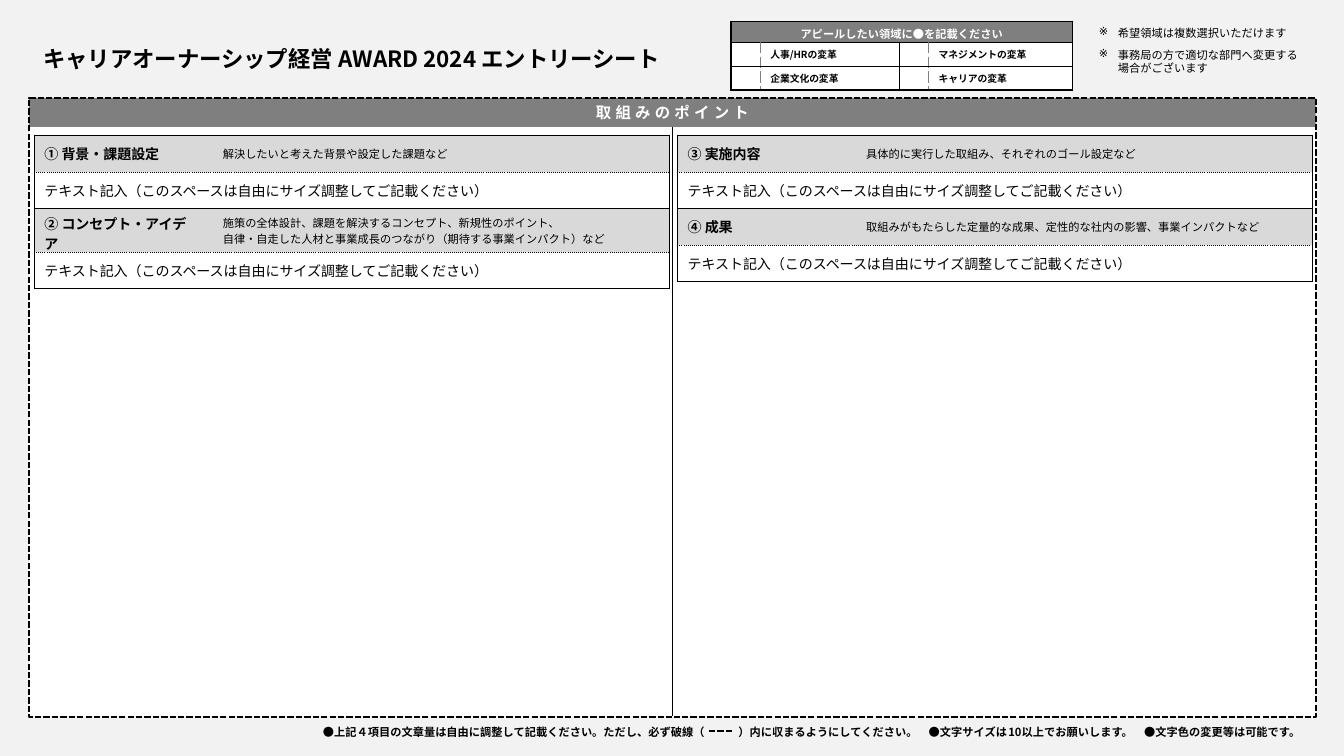
from copy import deepcopy
from dataclasses import dataclass

from lxml import etree
from pptx import Presentation
from pptx.dml.color import RGBColor
from pptx.enum.dml import MSO_LINE
from pptx.enum.shapes import MSO_CONNECTOR, MSO_SHAPE
from pptx.enum.text import MSO_ANCHOR, MSO_AUTO_SIZE, PP_ALIGN
from pptx.oxml.ns import qn
from pptx.util import Inches, Pt

LEFT, CENTER, RIGHT = PP_ALIGN.LEFT, PP_ALIGN.CENTER, PP_ALIGN.RIGHT
MIDDLE = MSO_ANCHOR.MIDDLE
FIT_SHAPE = MSO_AUTO_SIZE.SHAPE_TO_FIT_TEXT
DASH = MSO_LINE.SQUARE_DOT  # stored as sysDash
RECTANGLE, STRAIGHT = MSO_SHAPE.RECTANGLE, MSO_CONNECTOR.STRAIGHT

# Content
TITLE = "キャリアオーナーシップ経営 AWARD 2024 エントリーシート"
BAND = "取組みのポイント"
NOTES = ["希望領域は複数選択いただけます", "事務局の方で適切な部門へ変更する\n場合がございます"]
FOOTER = (
    "●上記４項目の文章量は自由に調整して記載ください。ただし、必ず破線（　　　）内に収まるようにしてください。"
    "　●文字サイズは10以上でお願いします。　●文字色の変更等は可能です。"
)
AREA_PROMPT = "アピールしたい領域に●を記載ください"
AREAS = [("人事/HRの変革", "マネジメントの変革"), ("企業文化の変革", "キャリアの変革")]
ENTRY = "テキスト記入（このスペースは自由にサイズ調整してご記載ください）"
SECTION_COLUMNS = [
    [
        ("① 背景・課題設定　", "解決したいと考えた背景や設定した課題など"),
        ("② コンセプト・アイデア　",
         "施策の全体設計、課題を解決するコンセプト、新規性のポイント、\n"
         "自律・自走した人材と事業成長のつながり（期待する事業インパクト）など"),
    ],
    [
        ("③ 実施内容　", "具体的に実行した取組み、それぞれのゴール設定など"),
        ("④ 成果", "取組みがもたらした定量的な成果、定性的な社内の影響、事業インパクトなど"),
    ],
]


@dataclass(frozen=True)
class Theme:
    font: str = "Noto Sans CJK JP"
    ink: str = "000000"
    paper: str = "FFFFFF"
    page: str = "F2F2F2"
    band: str = "7F7F7F"
    heading: str = "D9D9D9"
    divider: str = "808080"
    title_size: float = 16
    band_size: float = 11
    body_size: float = 10
    small_size: float = 8
    area_size: float = 7


THEME = Theme()
NO_STYLE = "{2D5ABB26-0587-4C30-8999-92F81FD0307C}"

# Table edges: colour, points, dash
AREA_EDGE = (THEME.ink, 1, "solid")
AREA_DIVIDER = (THEME.divider, 0.5, "sysDash")
SECTION_EDGE = (THEME.ink, 0.5, "solid")
SECTION_DOTS = (THEME.ink, 0.5, "sysDot")

# Layout in inches
FRAME = (0.29, 0.97, 12.76, 6.14)
BAND_HEIGHT = 0.29
AREA_COLUMNS, AREA_ROWS = (0.29, 1.38, 0.29, 1.43), (0.21, 0.24, 0.23)
SECTION_WIDTHS, SECTION_ROWS = (1.77, 4.53), (0.37, 0.36, 0.36, 0.36)
SECTION_TOP, SECTION_LEFTS = 1.34, (0.34, 6.72)


def rgb(value):
    return RGBColor.from_string(value)


def write(para, text, size, bold=False, color=THEME.ink, align=LEFT, spacing=0):
    para.text = text.replace("\n", "\v")
    para.alignment = align
    if not text:
        para._p.get_or_add_endParaRPr().set("sz", str(int(size * 100)))
    for span in para.runs:
        for name, value in {"name": THEME.font, "size": Pt(size), "bold": bold}.items():
            setattr(span.font, name, value)
        span.font.color.rgb = rgb(color)
        props = span._r.get_or_add_rPr()
        etree.SubElement(props, qn("a:ea"), typeface=THEME.font)
        if spacing:
            props.set("spc", str(spacing * 100))
    for line_break in para._p.findall(qn("a:br")):
        line_break.insert(0, deepcopy(para.runs[0]._r.rPr))


def add_box(page, place, fill=None, dashed=False):
    box = page.shapes.add_shape(RECTANGLE, *map(Inches, place))
    box.shadow.inherit = False
    if fill:
        box.fill.solid()
        box.fill.fore_color.rgb = rgb(fill)
    else:
        box.fill.background()
    if dashed:
        style_line(box.line, 1.5, True)
    else:
        box.line.fill.background()
    return box


def style_line(line, width, dashed):
    line.color.rgb = rgb(THEME.ink)
    line.width = Pt(width)
    if dashed:
        line.dash_style = DASH


def add_line(page, start, end, width, dashed=False):
    line = page.shapes.add_connector(STRAIGHT, *map(Inches, start + end))
    style_line(line.line, width, dashed)
    etree.SubElement(line._element.spPr, qn("a:effectLst"))


def add_text(page, place, wrap=True):
    frame = page.shapes.add_textbox(*map(Inches, place)).text_frame
    frame.word_wrap = wrap
    frame.auto_size = FIT_SHAPE
    return frame


def add_grid(page, left, top, widths, heights):
    place = map(Inches, (left, top, sum(widths), sum(heights)))
    grid = page.shapes.add_table(len(heights), len(widths), *place).table
    grid.first_row = grid.horz_banding = False
    grid._tbl.tblPr.find(qn("a:tableStyleId")).text = NO_STYLE
    for column, width in zip(grid.columns, widths):
        column.width = Inches(width)
    for row, height in zip(grid.rows, heights):
        row.height = Inches(height)
    return grid


def format_cell(cell, fill, edges, margin=0.05):
    cell.vertical_anchor = MIDDLE
    cell.margin_top = cell.margin_bottom = Inches(margin)
    cell.fill.solid()
    cell.fill.fore_color.rgb = rgb(fill)
    props = cell._tc.get_or_add_tcPr()
    sides = [side for side in "LRTB" if side in edges]
    for index, side in enumerate(sides):
        color, width, dash = edges[side]
        edge = etree.Element(qn("a:ln" + side), w=str(Pt(width)))
        paint = etree.SubElement(edge, qn("a:solidFill"))
        etree.SubElement(paint, qn("a:srgbClr"), val=color)
        etree.SubElement(edge, qn("a:prstDash"), val=dash)
        props.insert(index, edge)


def add_areas(page):
    grid = add_grid(page, 7.25, 0.21, AREA_COLUMNS, AREA_ROWS)
    for cell in grid.rows[0].cells:
        format_cell(cell, THEME.band, dict.fromkeys("LRTB", AREA_EDGE), 0.04)
    grid.cell(0, 0).merge(grid.cell(0, 3))
    write(grid.cell(0, 0).text_frame.paragraphs[0], AREA_PROMPT, THEME.small_size, True, THEME.paper, CENTER)
    for row, labels in enumerate(AREAS, 1):
        for column in range(len(AREA_COLUMNS)):
            pair, is_label = divmod(column, 2)
            edges = dict.fromkeys("LRTB", AREA_EDGE)
            edges["L" if is_label else "R"] = AREA_DIVIDER
            cell = grid.cell(row, column)
            format_cell(cell, THEME.paper, edges, 0.04)
            write(cell.text_frame.paragraphs[0], labels[pair] if is_label else "", THEME.area_size, True)


def add_sections(page, left, sections):
    grid = add_grid(page, left, SECTION_TOP, SECTION_WIDTHS, SECTION_ROWS)
    for index, (heading, hint) in enumerate(sections):
        head, entry = 2 * index, 2 * index + 1
        for column, side in enumerate("LR"):
            format_cell(grid.cell(head, column), THEME.heading,
                        {side: SECTION_EDGE, "T": SECTION_EDGE, "B": SECTION_DOTS})
            format_cell(grid.cell(entry, column), THEME.paper,
                        {"L": SECTION_EDGE, "R": SECTION_EDGE, "T": SECTION_DOTS, "B": SECTION_EDGE})
        grid.cell(entry, 0).merge(grid.cell(entry, 1))
        write(grid.cell(head, 0).text_frame.paragraphs[0], heading, THEME.body_size, True)
        write(grid.cell(head, 1).text_frame.paragraphs[0], hint, THEME.small_size)
        write(grid.cell(entry, 0).text_frame.paragraphs[0], ENTRY, THEME.body_size)


def main():
    deck = Presentation()
    deck.slide_width, deck.slide_height = Inches(13.33), Inches(7.5)
    page = deck.slides.add_slide(deck.slide_layouts[6])

    # Page colour and framed entry area
    page.background.fill.solid()
    page.background.fill.fore_color.rgb = rgb(THEME.page)
    add_box(page, FRAME, THEME.paper)
    band = add_box(page, FRAME[:3] + (BAND_HEIGHT,), THEME.band)
    band.text_frame.vertical_anchor = MIDDLE
    write(band.text_frame.paragraphs[0], BAND, THEME.band_size, True, THEME.paper, CENTER, 3)
    add_box(page, FRAME, dashed=True)
    add_line(page, (6.67, 1.26), (6.67, 7.1), 0.75)

    # Title, footer with its dash sample, and notes
    title = add_text(page, (0.33, 0.4, 6.47, 0.37), wrap=False)
    write(title.paragraphs[0], TITLE, THEME.title_size, True)
    footer = add_text(page, (2.85, 7.15, 10.15, 0.24))
    write(footer.paragraphs[0], FOOTER, THEME.small_size, True, align=RIGHT)
    add_line(page, (7.03, 7.25), (7.28, 7.25), 1.5, dashed=True)
    notes = add_text(page, (10.8, 0.21, 2.24, 0.59))
    for index, note in enumerate(NOTES):
        para = notes.add_paragraph() if index else notes.paragraphs[0]
        para.space_after = Pt(6)
        props = para._p.get_or_add_pPr()
        props.set("marL", str(Inches(0.19)))
        props.set("indent", str(-Inches(0.19)))
        etree.SubElement(props, qn("a:buChar"), char="※")
        write(para, note, THEME.small_size)

    # Tables
    add_areas(page)
    for left, sections in zip(SECTION_LEFTS, SECTION_COLUMNS):
        add_sections(page, left, sections)

    deck.save("out.pptx")


if __name__ == "__main__":
    main()
